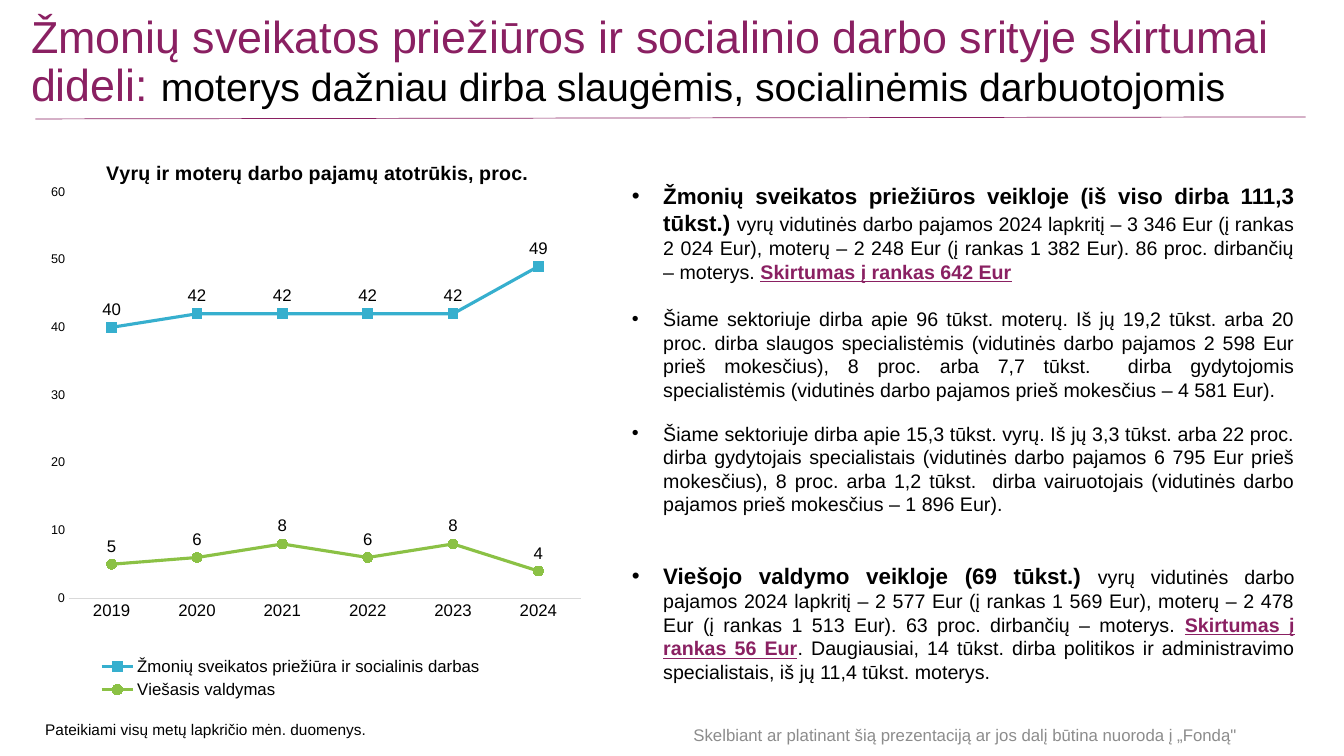
from lxml import etree
from pptx import Presentation
from pptx.chart.data import CategoryChartData
from pptx.dml.color import RGBColor
from pptx.enum.chart import (XL_CHART_TYPE, XL_LABEL_POSITION, XL_LEGEND_POSITION,
                             XL_MARKER_STYLE, XL_TICK_MARK)
from pptx.enum.shapes import MSO_CONNECTOR
from pptx.enum.text import MSO_ANCHOR, MSO_AUTO_SIZE, PP_ALIGN
from pptx.oxml.ns import qn
from pptx.util import Inches, Pt

COLORS = {
    "plum": "8A2062",
    "black": "000000",
    "gray": "8C8C8C",
    "axis": "D9D9D9",
    "blue": "36AFCE",
    "green": "8BC145",
}


def rgb(name):
    return RGBColor.from_string(COLORS[name])


def format_font(font, size=14, color="black", bold=False, underline=False):
    font.name = "Arial"
    font.size = Pt(size)
    font.bold = bold
    font.underline = underline
    font.color.rgb = rgb(color)


def add_run(p, text, **fmt):
    r = p.add_run()
    r.text = text
    format_font(r.font, **fmt)


def set_layout(element, index, x, y, w=None, h=None, inner=False):
    """Place a chart part by fractions of the chart area."""
    old = element.find(qn("c:layout"))
    if old is not None:
        element.remove(old)
    layout = etree.Element(qn("c:layout"))
    manual = etree.SubElement(layout, qn("c:manualLayout"))
    values = [("layoutTarget", "inner")] if inner else []
    values += [("xMode", "edge"), ("yMode", "edge"), ("x", x), ("y", y)]
    if w is not None:
        values += [("w", w), ("h", h)]
    for tag, value in values:
        etree.SubElement(manual, qn(f"c:{tag}")).set("val", str(value))
    element.insert(index, layout)


class SlideBuilder:
    def __init__(self, prs):
        self.s = prs.slides.add_slide(prs.slide_layouts[6])

    def text(self, box, paragraphs, align=PP_ALIGN.LEFT, anchor=MSO_ANCHOR.TOP,
             line_spacing=None, bullets=False, grow=False):
        """Each paragraph is (space before in points, [(text, format), ...])."""
        sp = self.s.shapes.add_textbox(*map(Inches, box))
        tf = sp.text_frame
        tf.word_wrap = True
        tf.vertical_anchor = anchor
        tf.auto_size = MSO_AUTO_SIZE.SHAPE_TO_FIT_TEXT if grow else MSO_AUTO_SIZE.NONE
        for i, (space, runs) in enumerate(paragraphs):
            p = tf.paragraphs[0] if i == 0 else tf.add_paragraph()
            p.alignment = align
            p.space_before = Pt(space)
            if line_spacing:
                p.line_spacing = line_spacing
            if bullets:
                self.bullet(p)
            for text, fmt in runs:
                add_run(p, text, **fmt)

    def bullet(self, p):
        pPr = p._p.get_or_add_pPr()
        pPr.set("marL", str(Inches(0.31)))
        pPr.set("indent", str(Inches(-0.31)))
        etree.SubElement(pPr, qn("a:buFont")).set("typeface", "Arial")
        etree.SubElement(pPr, qn("a:buChar")).set("char", "•")

    def line(self, x1, y1, x2, y2, color, width):
        c = self.s.shapes.add_connector(MSO_CONNECTOR.STRAIGHT,
                                        *map(Inches, (x1, y1, x2, y2)))
        c.line.color.rgb = rgb(color)
        c.line.width = Pt(width)
        etree.SubElement(c._element.spPr, qn("a:effectLst"))

    def line_chart(self, box, title, categories, series, top):
        data = CategoryChartData(number_format="#,##0")
        data.categories = categories
        for name, values, _, _ in series:
            data.add_series(name, values)
        chart = self.s.shapes.add_chart(XL_CHART_TYPE.LINE_MARKERS,
                                        *map(Inches, box), data).chart
        format_font(chart.font, size=10)

        # Title, plot area and legend
        chart.has_title = True
        add_run(chart.chart_title.text_frame.paragraphs[0], title, size=14, bold=True)
        chart.has_legend = True
        legend = chart.legend
        legend.position = XL_LEGEND_POSITION.BOTTOM
        legend.include_in_layout = False
        format_font(legend.font, size=12)
        set_layout(chart.chart_title.element, 1, 0.12, 0.03)
        set_layout(chart.element.find(f".//{qn('c:plotArea')}"), 0,
                   0.06, 0.092, 0.912, 0.721, inner=True)
        set_layout(legend._element, 1, 0.08, 0.91, 0.75, 0.09)

        # Axes
        for axis, size in ((chart.category_axis, 12), (chart.value_axis, 9)):
            axis.has_major_gridlines = False
            axis.major_tick_mark = axis.minor_tick_mark = XL_TICK_MARK.NONE
            format_font(axis.tick_labels.font, size=size)
        chart.category_axis.format.line.color.rgb = rgb("axis")
        chart.category_axis.format.line.width = Pt(0.75)
        value_axis = chart.value_axis
        value_axis.minimum_scale, value_axis.maximum_scale = 0, top
        value_axis.major_unit = 10
        value_axis.format.line.fill.background()
        value_axis.tick_labels.number_format = "0"
        value_axis.tick_labels.number_format_is_linked = False

        # Series
        plot = chart.plots[0]
        plot.vary_by_categories = False
        for ser, (_, _, color, marker) in zip(plot.series, series):
            ser.smooth = False
            ser.format.line.color.rgb = rgb(color)
            ser.format.line.width = Pt(2.25)
            ser.marker.style = marker
            ser.marker.size = 7
            ser.marker.format.fill.solid()
            ser.marker.format.fill.fore_color.rgb = rgb(color)
            ser.marker.format.line.color.rgb = rgb(color)
            labels = ser.data_labels
            labels.show_value = True
            labels.position = XL_LABEL_POSITION.ABOVE
            labels.number_format = "#,##0"
            labels.number_format_is_linked = False
            format_font(labels.font, size=12)


def main():
    prs = Presentation()
    prs.slide_width, prs.slide_height = Inches(13.33), Inches(7.5)
    slide = SlideBuilder(prs)
    lead = dict(size=16, bold=True)
    accent = dict(color="plum", bold=True, underline=True)

    # Heading
    slide.text((0.21, 0.18, 13.12, 0.89), [(0, [
        ("Žmonių sveikatos priežiūros ir socialinio darbo srityje skirtumai dideli: ",
         dict(size=32, color="plum")),
        ("moterys dažniau dirba slaugėmis, socialinėmis darbuotojomis", dict(size=28)),
    ])], anchor=MSO_ANCHOR.MIDDLE, line_spacing=0.9)
    slide.line(0.35, 1.18, 12.95, 1.16, "plum", 0.5)

    # Pay gap chart
    slide.line_chart(
        (0.35, 1.39, 5.57, 5.59), "Vyrų ir moterų darbo pajamų atotrūkis, proc.",
        [str(year) for year in range(2019, 2025)],
        [("Žmonių sveikatos priežiūra ir socialinis darbas",
          (40, 42, 42, 42, 42, 49), "blue", XL_MARKER_STYLE.SQUARE),
         ("Viešasis valdymas", (5, 6, 8, 6, 8, 4), "green", XL_MARKER_STYLE.CIRCLE)],
        top=60)

    # Findings
    slide.text((6.17, 1.76, 6.77, 5.35), [
        (0, [("Žmonių sveikatos priežiūros veikloje (iš viso dirba 111,3 tūkst.) ", lead),
             ("vyrų vidutinės darbo pajamos 2024 lapkritį – 3 346 Eur (į rankas 2 024 Eur), "
              "moterų – 2 248 Eur (į rankas 1 382 Eur). 86 proc. dirbančių – moterys. ", {}),
             ("Skirtumas į rankas 642 Eur", accent)]),
        (17, [("Šiame sektoriuje dirba apie 96 tūkst. moterų. Iš jų 19,2 tūkst. arba 20 proc. "
               "dirba slaugos specialistėmis (vidutinės darbo pajamos 2 598 Eur prieš "
               "mokesčius), 8 proc. arba 7,7 tūkst.  dirba gydytojomis specialistėmis "
               "(vidutinės darbo pajamos prieš mokesčius – 4 581 Eur).", {})]),
        (14.5, [("Šiame sektoriuje dirba apie 15,3 tūkst. vyrų. Iš jų 3,3 tūkst. arba 22 proc. "
                 "dirba gydytojais specialistais (vidutinės darbo pajamos 6 795 Eur prieš "
                 "mokesčius), 8 proc. arba 1,2 tūkst.  dirba vairuotojais (vidutinės darbo "
                 "pajamos prieš mokesčius – 1 896 Eur).", {})]),
        (33.5, [("Viešojo valdymo veikloje (69 tūkst.) ", lead),
                ("vyrų vidutinės darbo pajamos 2024 lapkritį – 2 577 Eur (į rankas 1 569 Eur), "
                 "moterų – 2 478 Eur (į rankas 1 513 Eur). 63 proc. dirbančių – moterys. ", {}),
                ("Skirtumas į rankas 56 Eur", accent),
                (". Daugiausiai, 14 tūkst. dirba politikos ir administravimo specialistais, "
                 "iš jų 11,4 tūkst. moterys.", {})]),
    ], align=PP_ALIGN.JUSTIFY, bullets=True, grow=True)

    # Footnotes
    slide.text((0.35, 7.09, 6.36, 0.29), [
        (0, [("Pateikiami visų metų lapkričio mėn. duomenys.", dict(size=11))])], grow=True)
    slide.text((6.54, 7.09, 6.07, 0.4), [
        (0, [("Skelbiant ar platinant šią prezentaciją ar jos dalį būtina nuoroda į „Fondą\"",
              dict(size=12, color="gray"))])],
        align=PP_ALIGN.CENTER, anchor=MSO_ANCHOR.MIDDLE)
    prs.save("out.pptx")


if __name__ == "__main__":
    main()
